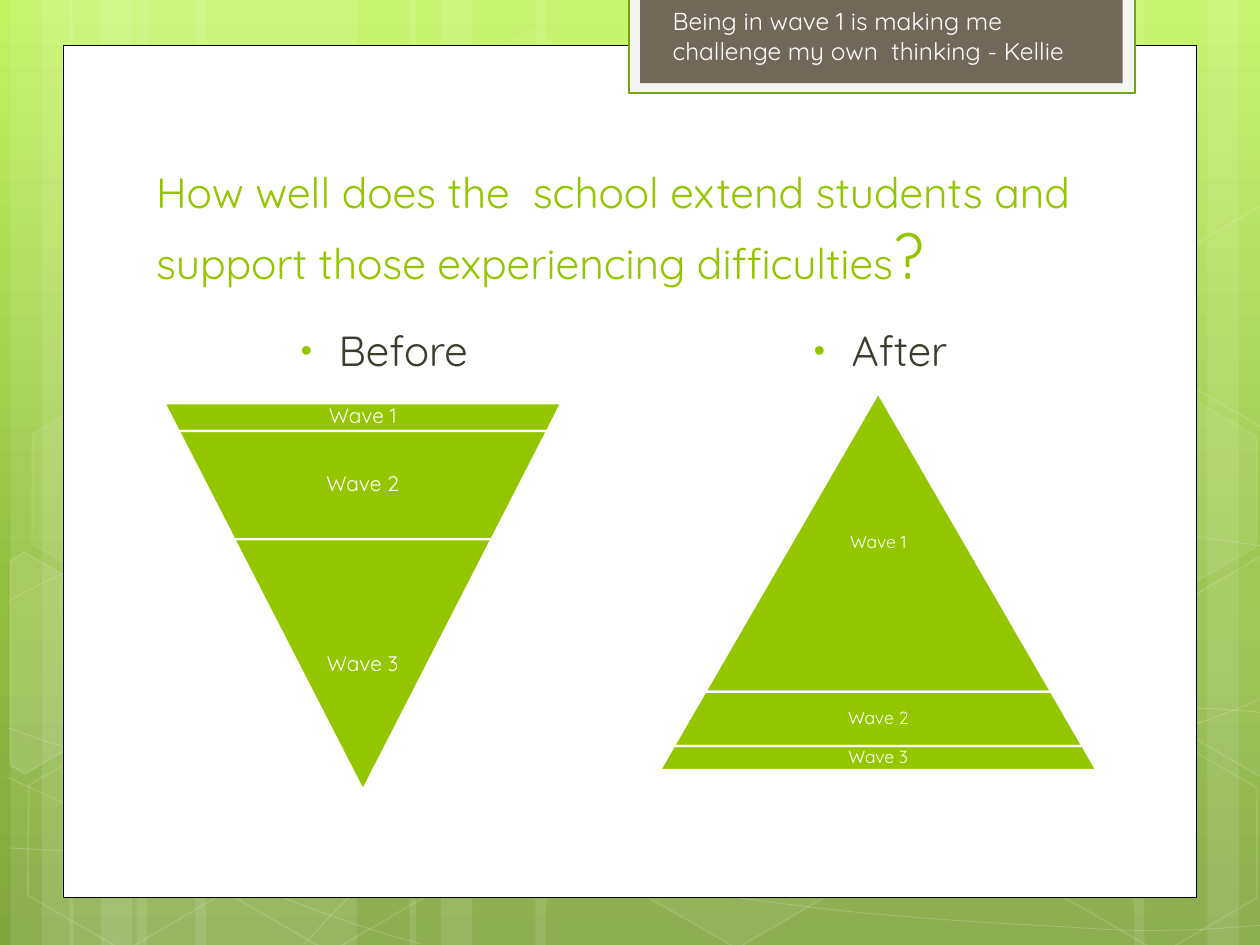
from copy import deepcopy
from math import cos, radians, sin
from typing import NamedTuple, Optional

from lxml import etree
from pptx import Presentation
from pptx.dml.color import RGBColor
from pptx.enum.shapes import MSO_SHAPE
from pptx.enum.text import MSO_ANCHOR, PP_ALIGN
from pptx.oxml.ns import qn
from pptx.util import Inches, Pt

RECT, HEXAGON, TRAPEZOID = MSO_SHAPE.RECTANGLE, MSO_SHAPE.HEXAGON, MSO_SHAPE.TRAPEZOID
TOP, MIDDLE, BOTTOM = MSO_ANCHOR.TOP, MSO_ANCHOR.MIDDLE, MSO_ANCHOR.BOTTOM
LEFT, CENTER = PP_ALIGN.LEFT, PP_ALIGN.CENTER
FONT, WHITE, GREEN, DARK = "Quicksand", "FFFFFF", "94C600", "3E3D2D"
COLUMNS, ROWS = 10, 7.5  # page grid, one inch per cell
STRIPE = 1 / 12  # stripes sit on twelfths of a column
TILT = 30  # hexagon rotation in degrees
LABEL_SHARE = 0.65  # label width as a share of its tier


class Box(NamedTuple):
    left: float
    top: float
    width: float
    height: float


class Paint(NamedTuple):
    fill: Optional[str] = None
    fill_alpha: int = 100
    line: Optional[str] = None
    weight: float = 1
    line_alpha: int = 100


class Span(NamedTuple):
    text: str
    size: float
    color: str = WHITE


class Tier(NamedTuple):
    label: str
    height: float


class Pyramid(NamedTuple):
    center: float
    top: float
    slope: float
    size: int
    inset: float
    inverted: bool
    tiers: list[Tier]


def rgb(color: str) -> RGBColor:
    return RGBColor.from_string(color)


def set_color(target, color: str, alpha: int, parent) -> None:
    target.solid()
    target.fore_color.rgb = rgb(color)
    if alpha < 100:
        node = parent.find(qn("a:solidFill")).find(qn("a:srgbClr"))
        etree.SubElement(node, qn("a:alpha")).set("val", str(alpha * 1000))


def paint_shape(shape, paint: Paint) -> None:
    shape.shadow.inherit = False
    properties = shape._element.spPr
    if paint.fill:
        set_color(shape.fill, paint.fill, paint.fill_alpha, properties)
    else:
        shape.fill.background()
    if paint.line:
        shape.line.width = Pt(paint.weight)
        set_color(shape.line.fill, paint.line, paint.line_alpha, properties.find(qn("a:ln")))
    else:
        shape.line.fill.background()


def add_block(page, kind, box: Box, paint: Paint, rotation: float = 0, adjust: Optional[float] = None) -> None:
    shape = page.shapes.add_shape(kind, *map(Inches, box))
    shape.rotation = rotation
    if adjust is not None:
        shape.adjustments[0] = adjust
    paint_shape(shape, paint)


def add_outline(page, points: list, paint: Paint, close: bool):
    start, *rest = [(Inches(x), Inches(y)) for x, y in points]
    builder = page.shapes.build_freeform(*start)
    builder.add_line_segments(rest, close=close)
    shape = builder.convert_to_shape()
    paint_shape(shape, paint)
    return shape


def add_curve(page, knots: list, paint: Paint) -> None:
    """Turn every three line segments into one cubic Bezier."""
    shape = add_outline(page, knots, paint, False)
    segments = list(shape._element.iter(qn("a:lnTo")))
    for i in range(0, len(segments), 3):
        curve = etree.Element(qn("a:cubicBezTo"))
        segments[i].addprevious(curve)
        for segment in segments[i:i + 3]:
            curve.append(segment[0])
            segment.getparent().remove(segment)


def add_cut_hexagon(page, corners: list, pivot: tuple, paint: Paint) -> None:
    """Lay the corners upright, then tilt the shape about its pivot."""
    c, s = cos(radians(TILT)), sin(radians(TILT))
    offsets = [(x - pivot[0], y - pivot[1]) for x, y in corners]
    upright = [(pivot[0] + c * dx + s * dy, pivot[1] - s * dx + c * dy) for dx, dy in offsets]
    add_outline(page, upright, paint, True).rotation = TILT


def add_text(page, box: Box, spans: list[Span], align=LEFT, anchor=TOP, inset: Optional[float] = None):
    frame = page.shapes.add_textbox(*map(Inches, box)).text_frame
    frame.word_wrap = True
    frame.vertical_anchor = anchor
    if inset is not None:
        frame.margin_left = frame.margin_right = frame.margin_top = frame.margin_bottom = Inches(inset)
    para = frame.paragraphs[0]
    para.alignment = align
    for span in spans:
        run = para.add_run()
        run.text = span.text
        run.font.name, run.font.size = FONT, Pt(span.size)
        run.font.color.rgb = rgb(span.color)
    return para


def add_bullet(para) -> None:
    properties = para._p.get_or_add_pPr()
    properties.set("marL", str(Inches(0.38)))
    properties.set("indent", str(Inches(-0.3)))
    color = etree.SubElement(properties, qn("a:buClr"))
    etree.SubElement(color, qn("a:srgbClr")).set("val", GREEN)
    etree.SubElement(properties, qn("a:buSzPct")).set("val", "76000")
    etree.SubElement(properties, qn("a:buFont")).set("typeface", "Arial")
    etree.SubElement(properties, qn("a:buChar")).set("char", "•")


def add_pyramid(page, pyramid: Pyramid) -> None:
    total = sum(tier.height for tier in pyramid.tiers)
    depth = 0
    for tier in pyramid.tiers:
        # The wide edge grows with its distance from the tip
        reach = total - depth if pyramid.inverted else depth + tier.height
        half = pyramid.slope * reach
        top = pyramid.top + depth
        add_block(page, TRAPEZOID, Box(pyramid.center - half, top, 2 * half, tier.height),
                  Paint(GREEN, line=WHITE, weight=1.25), 180 if pyramid.inverted else 0, pyramid.slope)
        if reach > tier.height + 0.01:  # only the tip has a label of full width
            half *= LABEL_SHARE
        para = add_text(page, Box(pyramid.center - half, top, 2 * half, tier.height),
                        [Span(tier.label, pyramid.size)], CENTER, MIDDLE, pyramid.inset)
        para.line_spacing = 0.9
        depth += tier.height


def set_background(page, stops: list) -> None:
    fill = page.background.fill
    fill.gradient()
    fill.gradient_angle = 270
    stop_list = page._element.find(".//" + qn("a:gsLst"))
    stop_list.append(deepcopy(stop_list[0]))
    for stop, (position, color) in zip(fill.gradient_stops, stops):
        stop.position = position
        stop.color.rgb = rgb(color)


# Background stripes: left column and width, in twelfths
CLUSTER = [(13, 21), (1, 6), (4, 10)]
STRIPES = CLUSTER + [(left + 5.6, width) for left, width in CLUSTER] + [
    (88, 21), (115, 6), (108, 10), (51, 37), (39, 6), (42, 10)]
CURVES = [
    [(0.07, 6.73), (0.61, 6.76), (1.15, 6.79), (1.9, 6.78), (2.65, 6.77), (3.58, 6.75), (4.58, 6.65),
     (5.58, 6.55), (7, 6.36), (7.92, 6.17), (8.83, 5.98), (9.77, 5.68), (10.07, 5.51)],
    [(0.07, 4.77), (0.36, 4.61), (0.65, 4.46), (1.21, 4.31), (1.78, 4.16), (2.59, 3.94), (3.47, 3.87),
     (4.36, 3.8), (5.44, 3.79), (6.54, 3.87), (7.64, 3.95), (9.47, 4.26), (10.07, 4.34)],
    [(0.06, 6.17), (1.27, 6.72), (2.47, 7.27), (3.34, 7.49)],
    [(0.07, 5.78), (0.38, 5.89), (0.7, 6), (1.28, 6.16), (1.86, 6.31), (2.73, 6.56), (3.57, 6.73),
     (4.4, 6.9), (5.45, 7.08), (6.28, 7.18), (7.11, 7.29), (8, 7.33), (8.53, 7.36),
     (9.05, 7.4), (9.19, 7.38), (9.45, 7.38), (9.71, 7.37), (9.89, 7.35), (10.07, 7.34)],
    [(2.42, 7.49), (2.6, 7.29), (2.78, 7.09), (3.02, 6.91), (3.26, 6.73), (3.6, 6.53), (3.88, 6.39),
     (4.16, 6.25), (4.33, 6.19), (4.7, 6.09), (5.06, 5.99), (5.73, 5.85), (6.08, 5.78),
     (6.44, 5.71), (6.49, 5.71), (6.8, 5.69), (7.11, 5.66), (7.6, 5.63), (7.94, 5.62),
     (8.29, 5.61), (9.2, 5.62), (9.53, 5.62), (9.71, 5.63), (9.88, 5.64), (10.06, 5.66)],
]
# Hexagons: left, top, fill opacity, line opacity
HEXAGONS = [(3.34, 0.36, 4, 8), (4.97, 5.89, 6, 12), (0.11, 5.91, 0, 12), (0.14, 3.12, 7, 8), (1.74, 5.92, 0, 12),
            (7.53, 4.53, 10, 12), (8.34, 5.93, 0, 12), (8.34, 3.14, 7, 8)]
LEFT_CUT = [(0.08, 4.45), (0.19, 4.38), (0.96, 4.82), (0.95, 5.7), (0.2, 6.14), (0.08, 6.07)]
RIGHT_CUT = [(9.26, 4.85), (10.01, 4.41), (10.09, 4.46), (10.09, 6.13), (10.02, 6.17), (9.26, 5.73)]
UPPER_CUT = [(x, y - 2.78) for x, y in RIGHT_CUT]
CUTS = [(LEFT_CUT, (0.36, 5.35), 10), (RIGHT_CUT, (9.85, 5.2), 4), (UPPER_CUT, (9.85, 2.42), 0)]
PYRAMIDS = [
    Pyramid(2.88, 3.2, 0.513, 12, 0.02, True, [Tier("Wave 1", 0.22), Tier("Wave 2", 0.86), Tier("Wave 3", 1.99)]),
    Pyramid(6.97, 3.12, 0.579, 10, 0.01, False, [Tier("Wave 1", 2.37), Tier("Wave 2", 0.43), Tier("Wave 3", 0.19)]),
]


def main() -> None:
    deck = Presentation()
    deck.slide_width, deck.slide_height = Inches(COLUMNS), Inches(ROWS)
    page = deck.slides.add_slide(deck.slide_layouts[6])

    # Backdrop
    set_background(page, [(0, "C3F35F"), (0.62, "93BF3F"), (1, "81A53E")])
    for left, width in STRIPES:
        add_block(page, RECT, Box(left * STRIPE, 0, width * STRIPE, ROWS), Paint(WHITE, 10))
    for knots in CURVES:
        add_curve(page, knots, Paint(line=WHITE, weight=0.5, line_alpha=20))
    for left, top, fill, line in HEXAGONS:
        paint = Paint(WHITE if fill else None, fill, WHITE, 1, line)
        add_block(page, HEXAGON, Box(left, top, 1.75, 1.52), paint, TILT, 0.285)
    for corners, pivot, fill in CUTS:
        add_cut_hexagon(page, corners, pivot, Paint(WHITE if fill else None, fill, WHITE, 1, 12))

    # White panel and quote tab
    add_block(page, RECT, Box(0.5, 0.36, 9, 6.76), Paint(WHITE, line="000000", weight=0.5))
    add_block(page, RECT, Box(4.99, -0.02, 4.02, 0.76), Paint("F5F5F5", line="74A510", weight=1.25))
    add_block(page, RECT, Box(5.08, -0.02, 3.83, 0.68), Paint("71685A"))

    # Title and column headings
    add_text(page, Box(1.14, 1.12, 7.68, 1.25), [
        Span("How well does the  school extend students and support those experiencing difficulties", 24.3, GREEN),
        Span("?", 36, GREEN)], anchor=BOTTOM)
    for left, heading in ((1.14, "Before"), (5.08, "After")):
        add_bullet(add_text(page, Box(left, 2.53, 3.74, 3.82), [Span(heading, 24, DARK)], CENTER))

    for pyramid in PYRAMIDS:
        add_pyramid(page, pyramid)

    # Quote
    add_text(page, Box(5.24, 0, 3.62, 0.57),
             [Span("Being in wave 1 is making me challenge my own  thinking - Kellie", 14)])
    deck.save("out.pptx")


if __name__ == "__main__":
    main()
